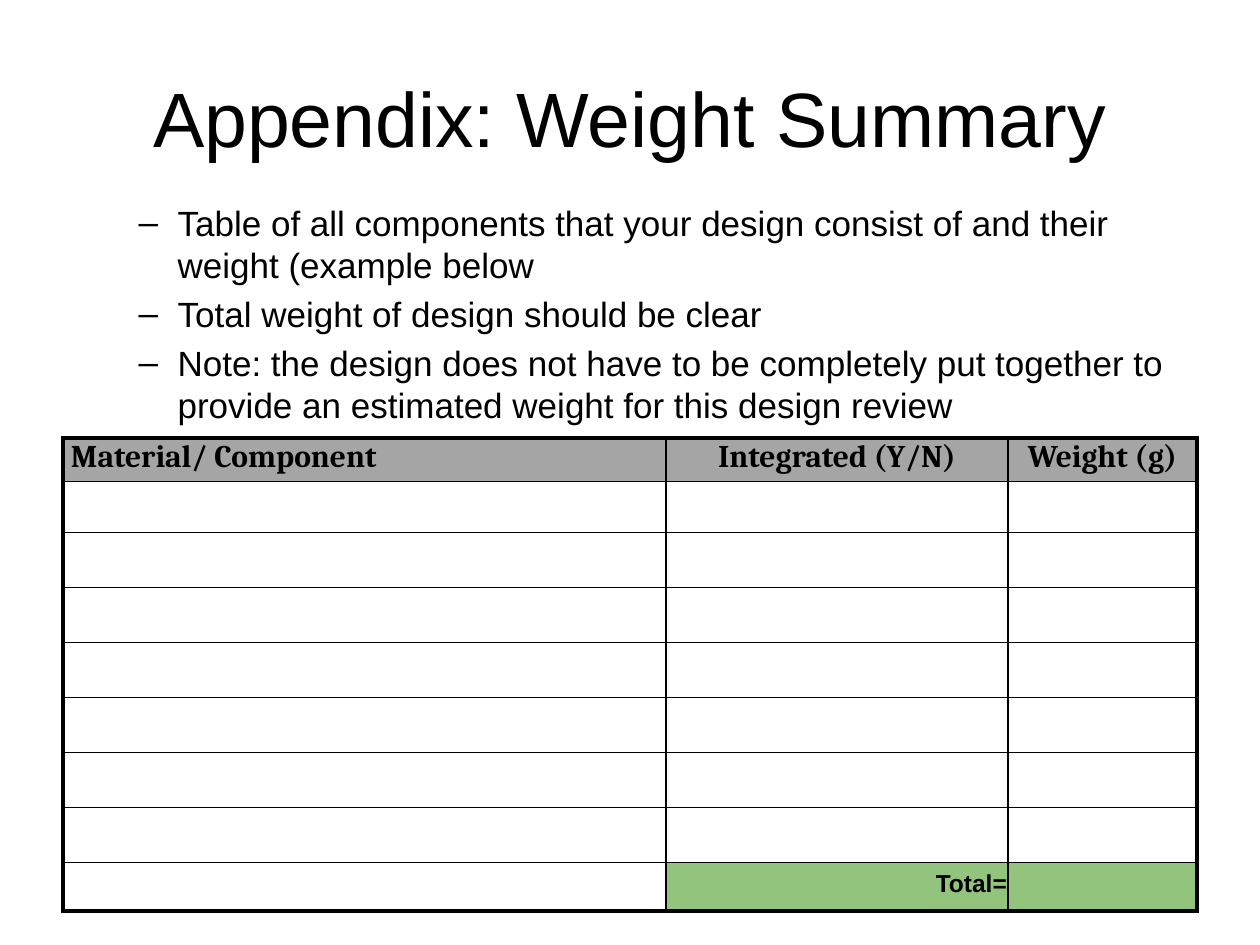
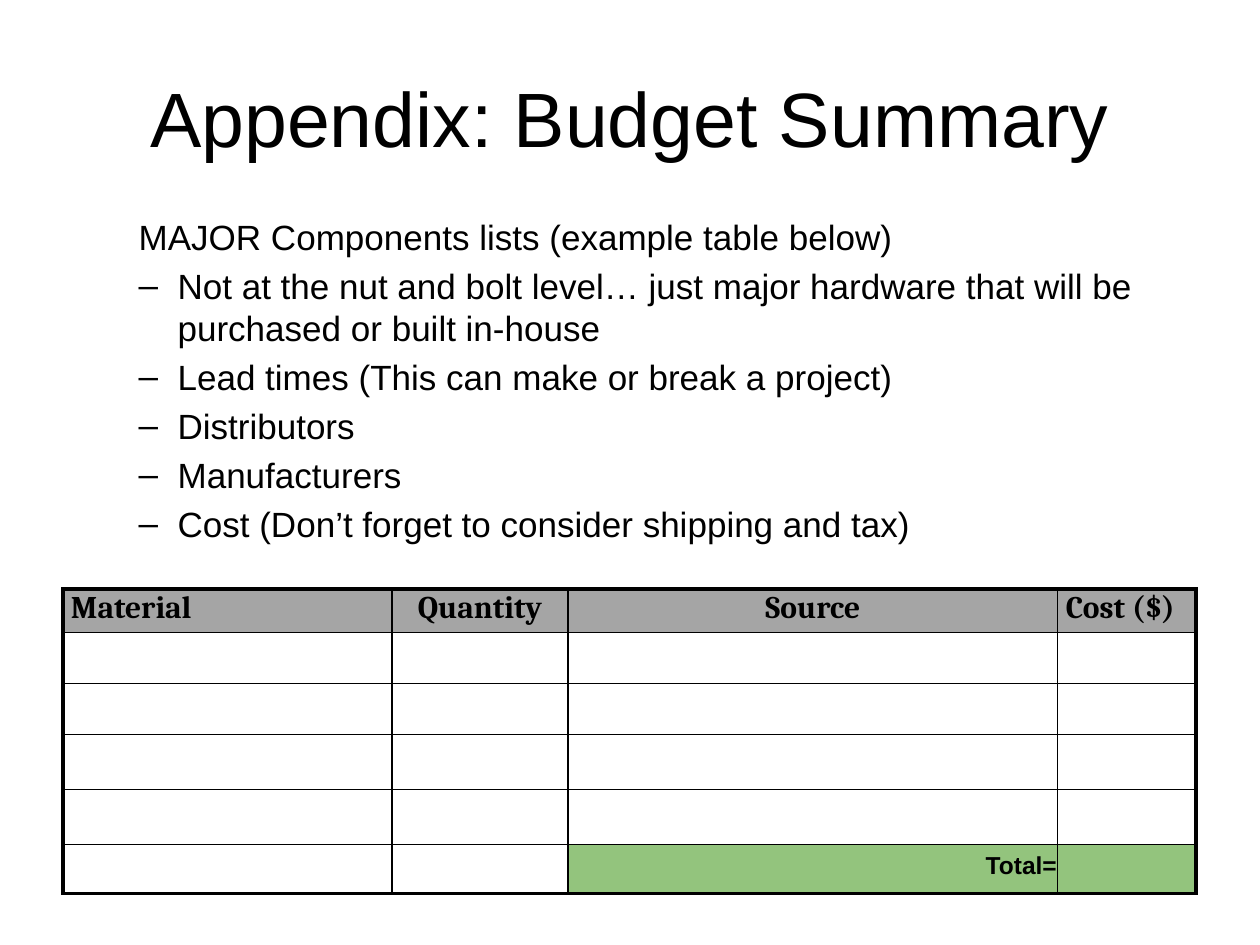
from dataclasses import dataclass

from lxml import etree
from pptx import Presentation
from pptx import util as u
from pptx.dml.color import RGBColor
from pptx.enum import text
from pptx.oxml import ns

PX = 914400 / 126
LEFT, CENTER, RIGHT = text.PP_ALIGN.LEFT, text.PP_ALIGN.CENTER, text.PP_ALIGN.RIGHT


def px(length):
    """Turn whole pixels into EMU."""
    return u.Emu(round(length * PX))


@dataclass(frozen=True)
class Theme:
    """Colours, fonts, type sizes and line widths of the deck."""
    ink: str = "000000"
    paper: str = "FFFFFF"
    header: str = "A5A5A5"
    total: str = "93C47D"
    sans: str = "Arial"
    serif: str = "Cambria"
    title_size: int = 44
    list_size: int = 20
    list_line: int = 24
    list_gap: int = 4
    header_size: int = 18
    total_size: int = 14
    outer_line: float = 2.25
    inner_line: float = 0.75


class Deck:
    """Builds slides in one style."""

    def __init__(self, theme):
        """Open an empty presentation."""
        self.theme = theme
        self.show = Presentation()
        self.show.slide_width, self.show.slide_height = px(1260), px(945)
        self.slide = None

    def place(self, holder, left, top, width, height):
        """Move a placeholder."""
        holder.left, holder.top = px(left), px(top)
        holder.width, holder.height = px(width), px(height)

    def style(self, paragraph, size, font, bold=False):
        """Format every run of a paragraph."""
        for run in paragraph.runs:
            run.font.size, run.font.name, run.font.bold = u.Pt(size), font, bold
            run.font.color.rgb = RGBColor.from_string(self.theme.ink)

    def title(self, heading):
        """Start a slide with its title."""
        self.slide = self.show.slides.add_slide(self.show.slide_layouts[1])
        holder = self.slide.shapes.title
        self.place(holder, 63, 38, 1134, 157)
        frame = holder.text_frame
        frame.text = heading
        frame.auto_size = text.MSO_AUTO_SIZE.NONE
        frame.vertical_anchor = text.MSO_ANCHOR.MIDDLE
        frame.paragraphs[0].alignment = CENTER
        self.style(frame.paragraphs[0], self.theme.title_size, self.theme.sans)

    def points(self, top, height, items, lead=None):
        """Fill the body with dashed points, after an optional plain lead."""
        theme = self.theme
        holder = self.slide.placeholders[1]
        self.place(holder, 63, top, 1134, height)
        frame = holder.text_frame
        frame.text = "\n".join([lead, *items] if lead else items)
        frame.auto_size = text.MSO_AUTO_SIZE.NONE
        for number, point in enumerate(frame.paragraphs):
            point.level = 1
            point.line_spacing = u.Pt(theme.list_line)
            point.space_before = u.Pt(theme.list_gap)
            self.style(point, theme.list_size, theme.sans)
            plain = lead and number == 0
            margin, indent = (63, 0) if plain else (102, -39)
            props = point._p.get_or_add_pPr()
            props.set("marL", str(px(margin)))
            props.set("indent", str(px(indent)))
            if plain:
                etree.SubElement(props, ns.qn("a:buNone"))
            else:
                etree.SubElement(props, ns.qn("a:buChar"), char="–")

    def border(self, cell, side, width):
        """Draw one side of a cell."""
        line = etree.SubElement(cell._tc.get_or_add_tcPr(), ns.qn(f"a:ln{side}"),
                                w=str(u.Pt(width)))
        fill = etree.SubElement(line, ns.qn("a:solidFill"))
        etree.SubElement(fill, ns.qn("a:srgbClr"), val=self.theme.ink)

    def cell(self, cell, edges, fill):
        """Set the borders, fill and margins of a cell."""
        theme = self.theme
        for side, is_outer in edges.items():
            self.border(cell, side, theme.outer_line if is_outer else theme.inner_line)
        cell.fill.solid()
        cell.fill.fore_color.rgb = RGBColor.from_string(fill)
        cell.margin_left = cell.margin_right = cell.margin_top = px(1)
        cell.margin_bottom = px(6)

    def label(self, cell, words, align, anchor, size, font):
        """Write bold words into a cell."""
        cell.text = words
        cell.vertical_anchor = anchor
        cell.text_frame.paragraphs[0].alignment = align
        self.style(cell.text_frame.paragraphs[0], size, font, bold=True)

    def summary(self, top, columns, heights):
        """Add an empty form with a header row and a total at its end."""
        theme = self.theme
        widths = [width for _, width, _ in columns]
        last_row, last_col = len(heights) - 1, len(columns) - 1
        form = self.slide.shapes.add_table(
            len(heights), len(columns), px(63), px(top),
            px(sum(widths)), px(sum(heights))).table
        form.first_row = form.horz_banding = False
        for column, width in zip(form.columns, widths):
            column.width = px(width)
        for r, height in enumerate(heights):
            form.rows[r].height = px(height)
            for c in range(len(columns)):
                edges = {"L": c == 0, "R": c == last_col,
                         "T": r == 0, "B": r == last_row}
                is_total = r == last_row and c >= last_col - 1
                fill = theme.header if r == 0 else theme.total if is_total else theme.paper
                self.cell(form.cell(r, c), edges, fill)
        for c, (name, _, align) in enumerate(columns):
            self.label(form.cell(0, c), name, align, text.MSO_ANCHOR.BOTTOM,
                       theme.header_size, theme.serif)
        self.label(form.cell(last_row, last_col - 1), "Total=", RIGHT,
                   text.MSO_ANCHOR.MIDDLE, theme.total_size, theme.sans)


def main():
    """Build the weight and budget appendices."""
    deck = Deck(Theme())

    deck.title("Appendix: Weight Summary")
    deck.points(195, 314, [
        "Table of all components that your design consist of and their weight (example below",
        "Total weight of design should be clear",
        "Note: the design does not have to be completely put together to provide "
        "an estimated weight for this design review",
    ])
    deck.summary(438, [
        (" Material/ Component", 603, LEFT),
        ("Integrated (Y/N)", 342, CENTER),
        ("Weight (g)", 189, CENTER),
    ], [39, 51] + [55] * 6 + [49])

    deck.title("Appendix: Budget Summary")
    deck.points(209, 353, [
        "Not at the nut and bolt level… just major hardware that will be "
        "purchased or built in-house",
        "Lead times (This can make or break a project)",
        "Distributors",
        "Manufacturers",
        "Cost (Don’t forget to consider shipping and tax)",
    ], lead="MAJOR Components lists (example table below)")
    deck.summary(589, [
        (" Material", 329, LEFT),
        ("Quantity", 176, CENTER),
        ("Source", 490, CENTER),
        (" Cost ($)", 138, LEFT),
    ], [39, 51, 51, 55, 55, 49])

    deck.show.save("out.pptx")


if __name__ == "__main__":
    main()
